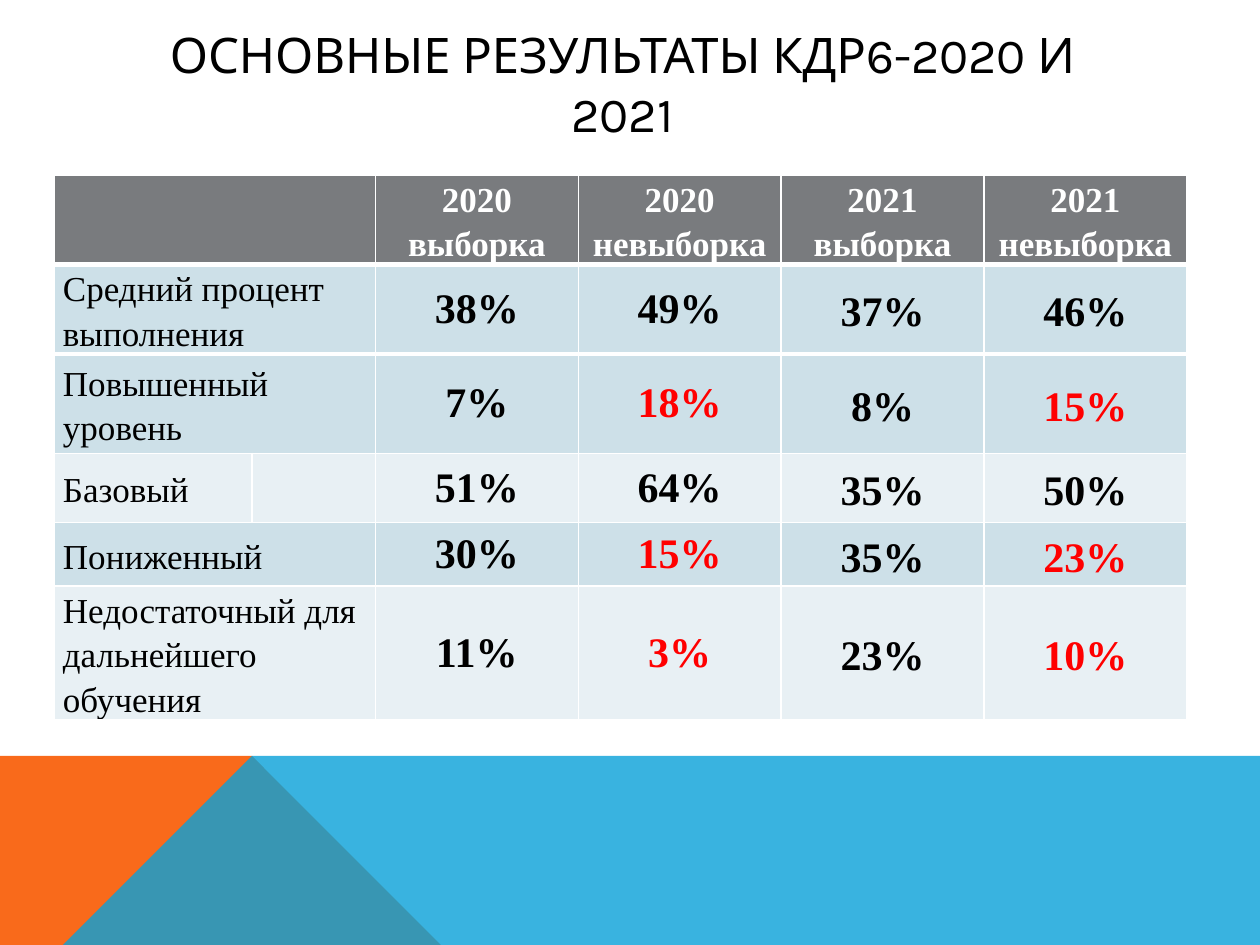
from lxml import etree
from pptx import Presentation
from pptx.dml.color import RGBColor
from pptx.enum import text
from pptx.oxml import ns
from pptx.util import Inches, Pt

BLACK = RGBColor(0, 0, 0)
WHITE = RGBColor(255, 255, 255)
RED = RGBColor(255, 0, 0)
ORANGE = RGBColor(0xF9, 0x6A, 0x1B)
BLUE = RGBColor(0x08, 0xA1, 0xD9)
GRAY = RGBColor(0x79, 0x7B, 0x7E)
MID = RGBColor(0xCD, 0xE0, 0xE8)
PALE = RGBColor(0xE8, 0xF0, 0xF4)

SERIF = "Times New Roman"
COLS = [1.57, 0.98] + [1.61] * 4
HEADS = ["2020\nвыборка", "2020 невыборка", "2021\nвыборка", "2021\nневыборка"]
ROWS = [
    ("Средний процент выполнения", ["38%", "49%", "37%", "46%"], MID, 0.65),
    ("Повышенный уровень", ["7%", "18%", "8%", "15%"], MID, 0.79),
    ("Базовый", ["51%", "64%", "35%", "50%"], PALE, 0.55),
    ("Пониженный", ["30%", "15%", "35%", "23%"], MID, 0.49),
    ("Недостаточный для дальнейшего обучения", ["11%", "3%", "23%", "10%"], PALE, 0.98),
]
SPLIT = 3
MARKED = (2, 4, 5)


def add_free(slide, points, color, alpha=None):
    build = slide.shapes.build_freeform(*points[0], scale=Inches(1))
    build.add_line_segments(points[1:], close=True)
    shape = build.convert_to_shape()
    shape.shadow.inherit = False
    shape.line.fill.background()
    shape.fill.solid()
    shape.fill.fore_color.rgb = color
    if alpha:
        clr = shape.fill._xPr.find(".//" + ns.qn("a:srgbClr"))
        etree.SubElement(clr, ns.qn("a:alpha"), val=str(alpha * 1000))


def style(frame, font, size, color, bold, align, gap=None):
    for para in frame.paragraphs:
        para.alignment = align
        if gap:
            para.line_spacing = gap
        for run in para.runs:
            run.font.name = font
            run.font.size = Pt(size)
            run.font.bold = bold
            run.font.color.rgb = color


def add_title(slide, words):
    box = slide.shapes.add_textbox(Inches(0.83), Inches(0.36), Inches(8.22), Inches(0.6))
    frame = box.text_frame
    frame.word_wrap = True
    frame.vertical_anchor = text.MSO_ANCHOR.MIDDLE
    frame.text = words
    style(frame, "Karla", 28, BLACK, False, text.PP_ALIGN.CENTER)


def add_edge(cell, side, width):
    props = cell._tc.get_or_add_tcPr()
    line = etree.SubElement(props, ns.qn("a:ln" + side), w=str(Pt(width)))
    fill = etree.SubElement(line, ns.qn("a:solidFill"))
    etree.SubElement(fill, ns.qn("a:srgbClr"), val=str(WHITE))


def paint(cell, row, color):
    top = 3 if row in (1, 2) else 1
    base = 3 if row in (0, 1) else 1
    for side, width in (("L", 1), ("R", 1), ("T", top), ("B", base)):
        add_edge(cell, side, width)
    cell.fill.solid()
    cell.fill.fore_color.rgb = color


def put(cell, words, size, color, bold, align, gap, pad=0):
    cell.vertical_anchor = text.MSO_ANCHOR.MIDDLE
    cell.margin_left = cell.margin_right = Inches(0.07)
    cell.margin_top = cell.margin_bottom = Inches(pad)
    cell.text_frame.text = words
    style(cell.text_frame, SERIF, size, color, bold, align, gap)


def add_grid(slide):
    high = Inches(4.56)
    holder = slide.shapes.add_table(
        len(ROWS) + 1, len(COLS), Inches(0.43), Inches(1.39), Inches(sum(COLS)), high)
    grid = holder.table
    for col, width in zip(grid.columns, COLS):
        col.width = Inches(width)
    tones = [GRAY] + [row[2] for row in ROWS]
    tall = [0.4] + [row[3] for row in ROWS]
    for r, (tone, size) in enumerate(zip(tones, tall)):
        grid.rows[r].height = Inches(size)
        for cell in grid.rows[r].cells:
            paint(cell, r, tone)
        if r != SPLIT:
            grid.cell(r, 0).merge(grid.cell(r, 1))
    holder.height = high

    mid = text.PP_ALIGN.CENTER
    for c, head in enumerate(HEADS, 2):
        put(grid.cell(0, c), head, 20, WHITE, True, mid, 1.15)
    for r, (label, values, _, _) in enumerate(ROWS, 1):
        put(grid.cell(r, 0), label, 20, BLACK, False, text.PP_ALIGN.LEFT, 1.15)
        for c, value in enumerate(values, 2):
            color = RED if r in MARKED and c in (3, 5) else BLACK
            cell = grid.cell(r, c)
            put(cell, value, 24, color, True, mid, 1.15 if c > 3 else None, 0.04)
            if r < SPLIT and c > 3:
                cell.text_frame.paragraphs[0].space_after = Pt(10)


def main():
    deck = Presentation()
    deck.slide_width, deck.slide_height = Inches(10), Inches(7.5)
    slide = deck.slides.add_slide(deck.slide_layouts[6])
    add_free(slide, [(0, 7.5), (0, 5.52), (2.23, 5.52), (3.91, 7.5)], ORANGE)
    add_free(slide, [(0, 7.5), (2.23, 5.52), (10, 5.52), (10, 7.5)], BLUE, 80)
    add_grid(slide)
    add_title(slide, "ОСНОВНЫЕ РЕЗУЛЬТАТЫ КДР6-2020 И 2021")
    deck.save("out.pptx")


if __name__ == "__main__":
    main()
